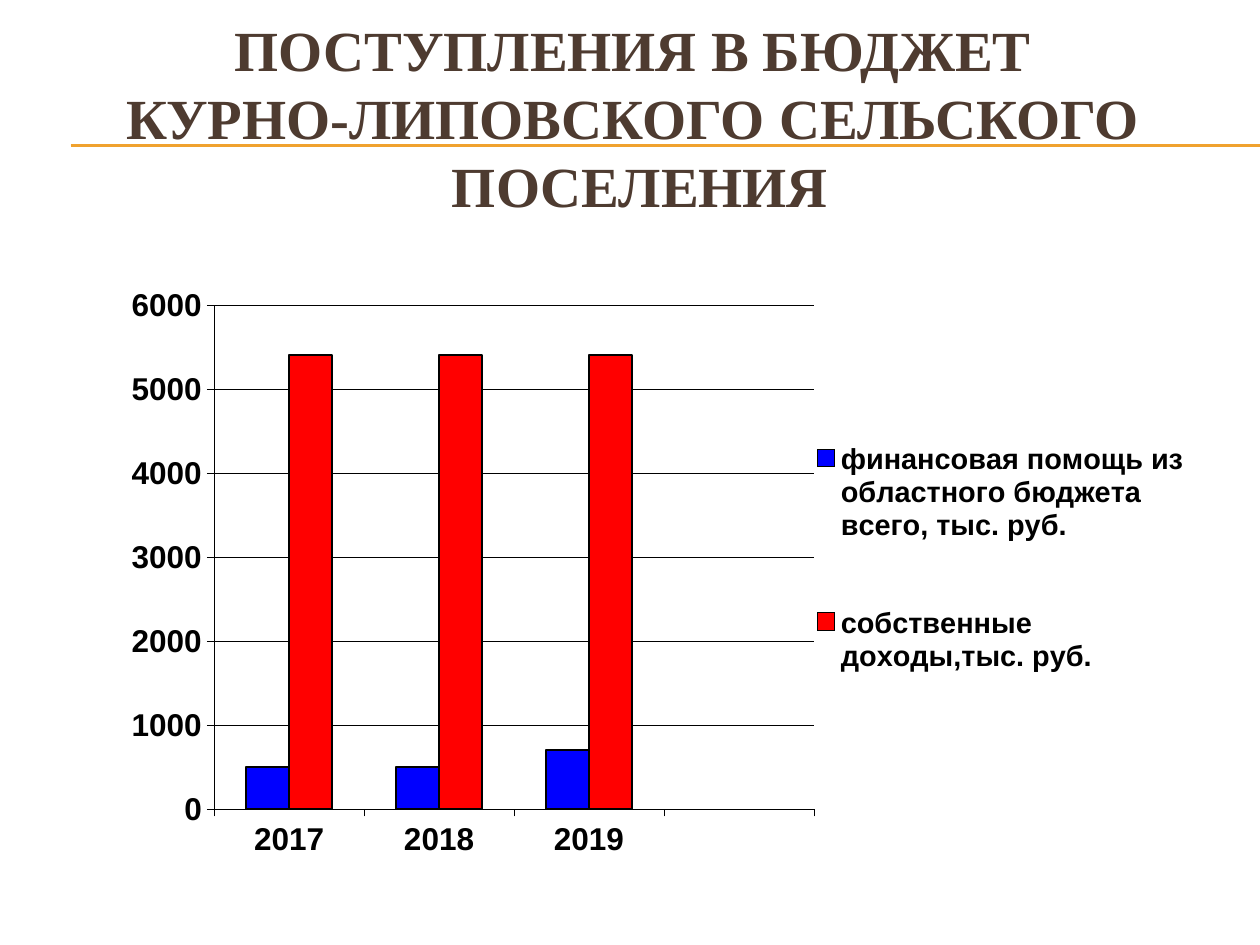
from lxml.etree import SubElement
from pptx import Presentation
from pptx.chart.data import CategoryChartData
from pptx.dml.color import RGBColor
from pptx.enum.chart import XL_CHART_TYPE, XL_LEGEND_POSITION, XL_TICK_MARK
from pptx.enum.shapes import MSO_CONNECTOR
from pptx.enum.text import MSO_ANCHOR, PP_ALIGN
from pptx.oxml.ns import qn
from pptx.util import Inches, Pt

COLORS = {
    "title": "4E3B30",
    "rule": "F0A22E",
    "ink": "000000",
    "aid": "0000FF",
    "own": "FF0000",
}
CHART_WIDTH, CHART_HEIGHT = 8.87, 4.84


class SlideBuilder:
    def __init__(self, slide):
        self.slide = slide

    def color(self, name):
        return RGBColor.from_string(COLORS[name])

    def style_font(self, font, name, size, color):
        font.name, font.size, font.bold = name, Pt(size), True
        font.color.rgb = self.color(color)

    def style_line(self, line, color, width):
        line.color.rgb = self.color(color)
        line.width = Pt(width)

    def rule(self, left, right, y):
        rule = self.slide.shapes.add_connector(
            MSO_CONNECTOR.STRAIGHT, Inches(left), Inches(y), Inches(right), Inches(y))
        self.style_line(rule.line, "rule", 0.75)
        SubElement(rule._element.spPr, qn("a:effectLst"))

    def title(self, text, left, top, width, height):
        frame = self.slide.shapes.add_textbox(
            Inches(left), Inches(top), Inches(width), Inches(height)).text_frame
        frame.word_wrap = True
        frame.vertical_anchor = MSO_ANCHOR.MIDDLE
        frame.margin_bottom = Inches(0.59)
        frame.text = text
        paragraph = frame.paragraphs[0]
        paragraph.alignment = PP_ALIGN.CENTER
        for run in paragraph.runs:
            self.style_font(run.font, "Times New Roman", 32.4, "title")

    def place(self, element, left, top, width, height, inner=False):
        """Fix a plot area or legend at a place given in inches within the chart."""
        layout = element.find(qn("c:layout"))
        if layout is None:
            layout = SubElement(element, qn("c:layout"))
            element.remove(layout)
            anchor = element.find(qn("c:legendPos"))
            element.insert(0 if anchor is None else 1, layout)
        for child in list(layout):
            layout.remove(child)
        manual = SubElement(layout, qn("c:manualLayout"))
        settings = [("layoutTarget", "inner")] if inner else []
        settings += [("xMode", "edge"), ("yMode", "edge"),
                     ("x", left / CHART_WIDTH), ("y", top / CHART_HEIGHT),
                     ("w", width / CHART_WIDTH), ("h", height / CHART_HEIGHT)]
        for tag, value in settings:
            SubElement(manual, qn(f"c:{tag}")).set("val", str(value))

    def column_chart(self, categories, series, left, top):
        data = CategoryChartData()
        data.categories = categories
        for name, values, _ in series:
            data.add_series(name, values)
        chart = self.slide.shapes.add_chart(
            XL_CHART_TYPE.COLUMN_CLUSTERED, Inches(left), Inches(top),
            Inches(CHART_WIDTH), Inches(CHART_HEIGHT), data).chart
        chart.has_title = False
        self.style_font(chart.font, "Arial", 18, "ink")

        plot = chart.plots[0]
        plot.gap_width, plot.overlap = 150, 0
        plot.vary_by_categories = False
        for bars, (_, _, color) in zip(plot.series, series):
            bars.format.fill.solid()
            bars.format.fill.fore_color.rgb = self.color(color)
            self.style_line(bars.format.line, "ink", 1)

        for axis in (chart.category_axis, chart.value_axis):
            axis.major_tick_mark = XL_TICK_MARK.OUTSIDE
            axis.minor_tick_mark = XL_TICK_MARK.NONE
            self.style_font(axis.tick_labels.font, "Arial", 18, "ink")
            self.style_line(axis.format.line, "ink", 0.25)
        values_axis = chart.value_axis
        values_axis.minimum_scale, values_axis.maximum_scale = 0, 6000
        values_axis.major_unit = 1000
        self.style_line(values_axis.major_gridlines.format.line, "ink", 0.25)

        chart.has_legend = True
        legend = chart.legend
        legend.position = XL_LEGEND_POSITION.RIGHT
        legend.include_in_layout = False
        self.style_font(legend.font, "Arial", 16.5, "ink")
        self.place(legend._element, 5.79, 0.81, 3.02, 2.86)
        plot_area = chart._chartSpace.chart.plotArea
        self.place(plot_area, 1.06, 0.23, 4.76, 4, inner=True)


def main():
    presentation = Presentation()
    presentation.slide_width, presentation.slide_height = Inches(10), Inches(7.5)
    builder = SlideBuilder(presentation.slides.add_slide(presentation.slide_layouts[6]))
    for y in (1.15, 1.16):
        builder.rule(0.56, 10, y)
    builder.title(
        "ПОСТУПЛЕНИЯ В БЮДЖЕТ \vКУРНО-ЛИПОВСКОГО СЕЛЬСКОГО \vПОСЕЛЕНИЯ",
        0.33, 0.5, 9.5, 1.39)
    builder.column_chart(
        ["2017", "2018", "2019", ""],
        [("финансовая помощь из областного бюджета всего, тыс. руб.",
          (500, 500, 700, None), "aid"),
         ("собственные доходы,тыс. руб.", (5400, 5400, 5400, None), "own")],
        0.64, 2.19)
    presentation.save("out.pptx")


if __name__ == "__main__":
    main()
